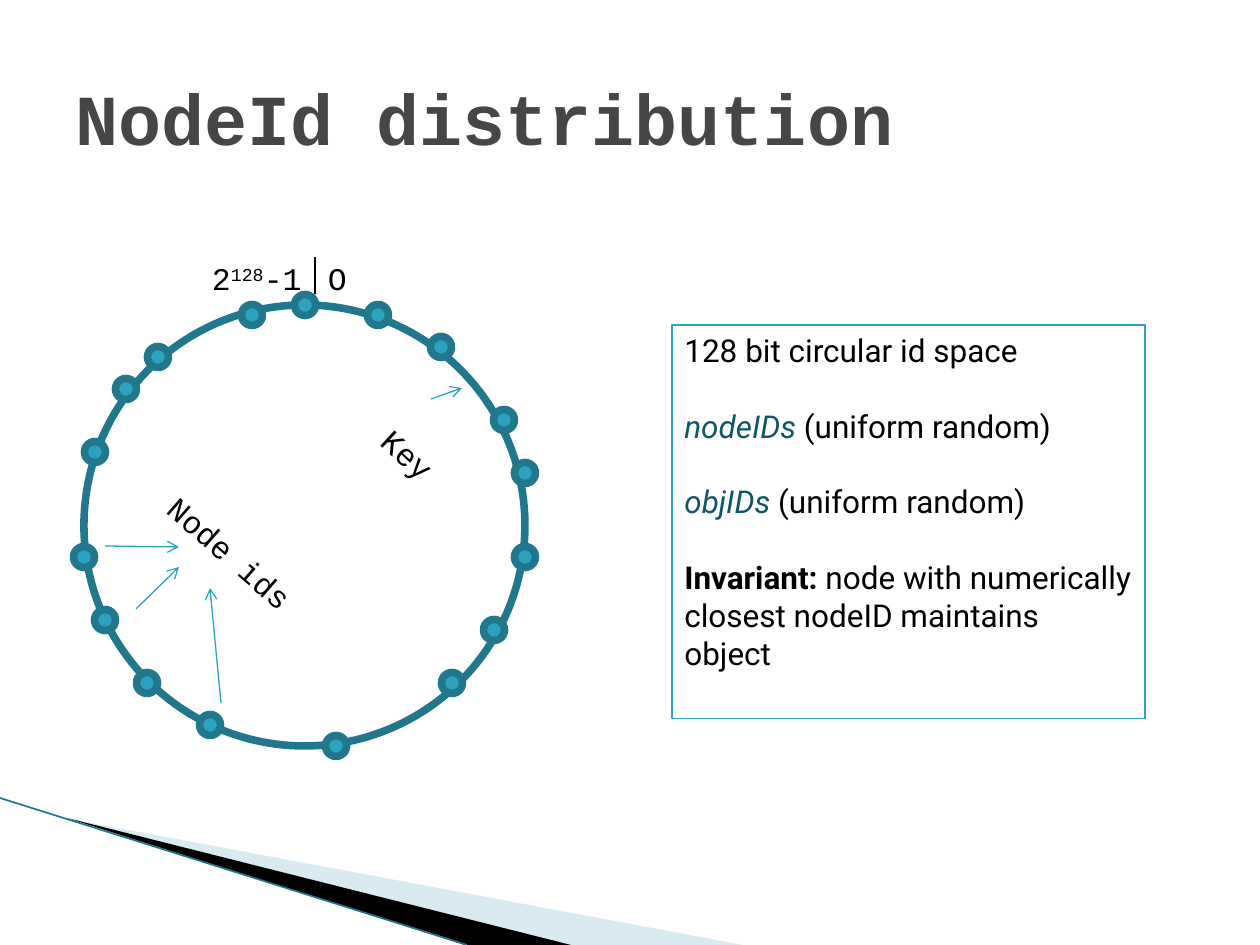
from lxml.etree import SubElement
from pptx import Presentation
from pptx.dml.color import RGBColor
from pptx.enum.shapes import MSO_CONNECTOR, MSO_SHAPE
from pptx.enum.text import MSO_ANCHOR, PP_ALIGN
from pptx.oxml.ns import qn
from pptx.util import Pt

PX = 914400 // 126
BLACK = RGBColor(0, 0, 0)
GRAY = RGBColor(0x46, 0x46, 0x46)
TEAL = RGBColor(0x2D, 0xA2, 0xBF)
DARK_TEAL = RGBColor(0x21, 0x78, 0x8D)
DEEP_TEAL = RGBColor(0x10, 0x57, 0x66)
PALE_BLUE = RGBColor(0xA0, 0xCB, 0xDC)
MONO, SANS = "Courier New", "Roboto"

RING = (84, 305, 441, 441)
NODE_SIZE = 21
NODE_CENTERS = [
    (305, 305), (378, 315), (441, 347), (504, 420), (525, 473), (525, 557),
    (494, 630), (452, 683), (336, 746), (210, 725), (147, 683), (105, 620),
    (84, 557), (95, 452), (126, 389), (158, 357), (252, 315),
]
ARROWS = [
    ((105, 546), (179, 547)),
    ((136, 609), (179, 567)),
    ((221, 703), (210, 588)),
    ((431, 399), (462, 388)),
]
SWOOSHES = [
    ([(69, 819), (743, 945), (571, 945)], PALE_BLUE, 40),
    ([(67, 818), (571, 945), (465, 945)], BLACK, 100),
]
LABELS = [
    ((126, 570, 305, 50), 41, 13, [("Node ids", 0)]),
    ((299, 411, 179, 50), 42.8, 88, [("Key", 0)]),
    ((199, 253, 126, 50), 0, 13, [("2", 0), ("128", 30), ("-1", 0)]),
    ((315, 253, 50, 50), 0, 13, [("O", 0)]),
]
FACTS = [
    [("128 bit circular id space", BLACK, False, False)],
    [("nodeIDs ", DEEP_TEAL, False, True), ("(uniform random)", BLACK, False, False)],
    [("objIDs", DEEP_TEAL, False, True), (" (uniform random)", BLACK, False, False)],
    [("Invariant:", BLACK, True, False),
     (" node with numerically closest nodeID maintains object", BLACK, False, False)],
]

deck = Presentation()
deck.slide_width, deck.slide_height = 1260 * PX, 945 * PX
page = deck.slides.add_slide(deck.slide_layouts[6])


def scaled(lengths):
    return [length * PX for length in lengths]


def add_swoosh(points, color, opacity):
    builder = page.shapes.build_freeform(*points[0], scale=PX)
    builder.add_line_segments(points[1:])
    shape = builder.convert_to_shape()
    shape.shadow.inherit = False
    shape.line.fill.background()
    shape.fill.solid()
    shape.fill.fore_color.rgb = color
    if opacity < 100:
        tint = shape.fill._xPr.find(".//" + qn("a:srgbClr"))
        SubElement(tint, qn("a:alpha"), val=str(opacity * 1000))


def add_line(start, end, color, width=0.75, arrow=False):
    line = page.shapes.add_connector(MSO_CONNECTOR.STRAIGHT, *scaled(start + end))
    line.line.color.rgb = color
    line.line.width = Pt(width)
    if arrow:
        SubElement(line.line._get_or_add_ln(), qn("a:tailEnd"), type="arrow")
    SubElement(line._element.spPr, qn("a:effectLst"))


def add_outline(kind, frame, color, width, fill=None):
    shape = page.shapes.add_shape(kind, *scaled(frame))
    shape.shadow.inherit = False
    shape.line.color.rgb = color
    shape.line.width = Pt(width)
    if fill is None:
        shape.fill.background()
    else:
        shape.fill.solid()
        shape.fill.fore_color.rgb = fill
    return shape


def add_span(para, text, font, size, color, bold=False, italic=False):
    span = para.add_run()
    span.text = text
    span.font.name, span.font.size = font, Pt(size)
    span.font.color.rgb = color
    span.font.bold, span.font.italic = bold, italic
    return span


for swoosh in SWOOSHES:
    add_swoosh(*swoosh)
add_line((0, 798), (467, 945), DARK_TEAL, 0.95)

title = page.shapes.add_textbox(*scaled((63, 38, 1134, 158))).text_frame
title.word_wrap = True
title.vertical_anchor = MSO_ANCHOR.MIDDLE
add_span(title.paragraphs[0], "NodeId distribution", MONO, 41, GRAY, bold=True)

add_outline(MSO_SHAPE.OVAL, RING, DARK_TEAL, 4.33)
add_line((315, 257), (315, 294), BLACK)
for x, y in NODE_CENTERS:
    frame = (x - NODE_SIZE / 2, y - NODE_SIZE / 2, NODE_SIZE, NODE_SIZE)
    add_outline(MSO_SHAPE.OVAL, [int(side * 2) / 2 for side in frame], DARK_TEAL, 4.33, TEAL)
for start, end in ARROWS:
    add_line(start, end, TEAL, arrow=True)

for frame, angle, indent, parts in LABELS:
    box = page.shapes.add_textbox(*scaled(frame))
    box.rotation = angle
    box.text_frame.word_wrap = True
    box.text_frame.margin_left = indent * PX
    for text, baseline in parts:
        span = add_span(box.text_frame.paragraphs[0], text, MONO, 18, BLACK)
        if baseline:
            span.font._element.set("baseline", str(baseline * 1000))

facts = add_outline(MSO_SHAPE.RECTANGLE, (672, 325, 473, 394), TEAL, 0.75).text_frame
facts.word_wrap = True
facts.vertical_anchor = MSO_ANCHOR.TOP
for index, spans in enumerate(FACTS):
    para = facts.add_paragraph() if index else facts.paragraphs[0]
    para.alignment = PP_ALIGN.LEFT
    if index:
        para.space_before = Pt(21.6)
    for text, color, bold, italic in spans:
        add_span(para, text, SANS, 18, color, bold, italic)

deck.save("out.pptx")
